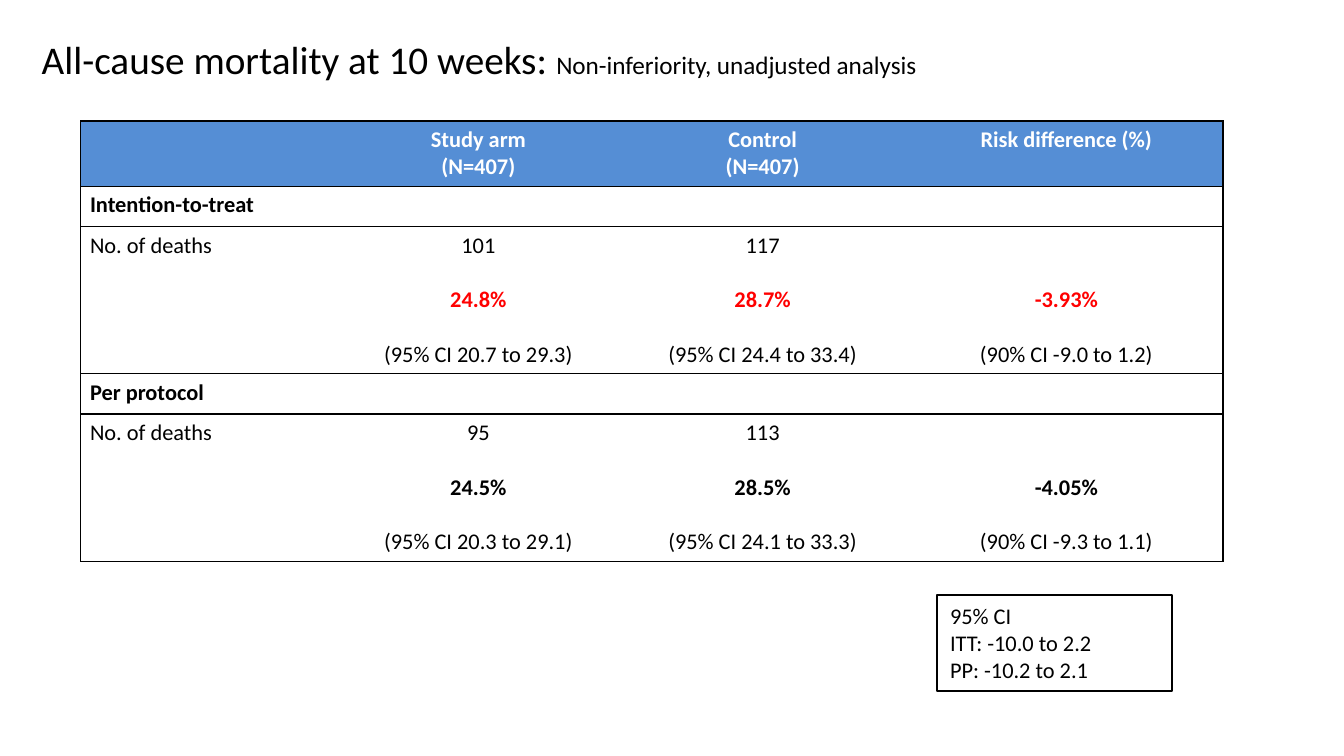
"""Build the slide on all-cause mortality at 10 weeks."""
import pptx
import pptx.dml.color
import pptx.enum.shapes
import pptx.enum.text
import pptx.oxml
import pptx.oxml.ns
import pptx.util

Inches, Pt = pptx.util.Inches, pptx.util.Pt
RGBColor = pptx.dml.color.RGBColor
ALIGN = pptx.enum.text.PP_ALIGN
ANCHOR = pptx.enum.text.MSO_ANCHOR

BLACK = RGBColor(0x00, 0x00, 0x00)
WHITE = RGBColor(0xFF, 0xFF, 0xFF)
RED = RGBColor(0xFF, 0x00, 0x00)
HEADER_BLUE = RGBColor(0x55, 0x8E, 0xD5)
FONT = "Calibri"
PLAIN_STYLE = "{2D5ABB26-0587-4C30-8999-92F81FD0307C}"

HEADLINE = [("All-cause mortality at 10 weeks: ", 21),
            ("Non-inferiority, unadjusted analysis", 13.5)]
HEADER = [[], ["Study arm", "(N=407)"], ["Control", "(N=407)"], ["Risk difference (%)"]]
ANALYSES = [
    ("Intention-to-treat", RED, [
        ["101", "24.8%", "(95% CI 20.7 to 29.3)"],
        ["117", "28.7%", "(95% CI 24.4 to 33.4)"],
        ["-3.93%", "(90% CI -9.0 to 1.2)"]]),
    ("Per protocol", BLACK, [
        ["95", "24.5%", "(95% CI 20.3 to 29.1)"],
        ["113", "28.5%", "(95% CI 24.1 to 33.3)"],
        ["-4.05%", "(90% CI -9.3 to 1.1)"]]),
]
INTERVALS = ["95% CI", "ITT: -10.0 to 2.2", "PP: -10.2 to 2.1"]

SLIDE_WIDTH = 10
SLIDE_HEIGHT = SLIDE_WIDTH * 9 / 16
COLUMN_WIDTHS = [1.94, 2.04, 2.19, 2.33]
HEADER_HEIGHT, SECTION_HEIGHT, RESULT_HEIGHT = 0.47, 0.3, 1.07
MARGIN_X, MARGIN_Y = 0.07, 0.04
RESULT_GAP = 14.6


def style(paragraph, color=BLACK, bold=False, align=ALIGN.LEFT):
    paragraph.alignment = align
    paragraph.font.name = FONT
    paragraph.font.size = Pt(12)
    paragraph.font.bold = bold
    paragraph.font.color.rgb = color


def fill_cell(cell, lines, formats, gap=0, top=MARGIN_Y, align=ALIGN.CENTER):
    cell.margin_left = cell.margin_right = Inches(MARGIN_X)
    cell.margin_top = Inches(top if lines else 0)
    cell.margin_bottom = Inches(MARGIN_Y if lines else 0)
    frame = cell.text_frame
    frame.text = "\n".join(lines)
    for index, paragraph in enumerate(frame.paragraphs):
        color, bold = formats[index] if lines else (BLACK, False)
        style(paragraph, color, bold, align)
        if index and gap:
            paragraph.space_before = Pt(gap)


def draw_borders(cell, sides):
    properties = cell._tc.get_or_add_tcPr()
    for index, side in enumerate(sides):
        properties.insert(index, pptx.oxml.parse_xml(
            f'<a:ln{side} {pptx.oxml.ns.nsdecls("a")} w="{Pt(0.75)}"><a:solidFill>'
            f'<a:srgbClr val="{BLACK}"/></a:solidFill></a:ln{side}>'))


def add_headline(slide):
    title = slide.shapes.title
    title.left, title.top = Inches(0.21), Inches(0.24)
    title.width, title.height = Inches(8.62), Inches(4.66)
    frame = title.text_frame
    frame.auto_size = pptx.enum.text.MSO_AUTO_SIZE.NONE
    frame.vertical_anchor = ANCHOR.TOP
    paragraph = frame.paragraphs[0]
    for text, size in HEADLINE:
        run = paragraph.add_run()
        run.text = text
        run.font.size = Pt(size)
    paragraph.alignment = ALIGN.LEFT
    paragraph.line_spacing = 0.94
    paragraph.font.name = FONT
    paragraph.font.color.rgb = BLACK


def add_mortality_table(slide):
    heights = [HEADER_HEIGHT] + [SECTION_HEIGHT, RESULT_HEIGHT] * len(ANALYSES)
    column_count, row_count = len(COLUMN_WIDTHS), len(heights)
    frame = slide.shapes.add_table(row_count, column_count, Inches(0.6), Inches(0.9),
                                   Inches(sum(COLUMN_WIDTHS)), Inches(sum(heights)))
    table = frame.table
    table.first_row = table.horz_banding = False
    table._tbl.tblPr.find(pptx.oxml.ns.qn("a:tableStyleId")).text = PLAIN_STYLE
    for column, width in zip(table.columns, COLUMN_WIDTHS):
        column.width = Inches(width)
    for row, height in zip(table.rows, heights):
        row.height = Inches(height)

    for column, lines in enumerate(HEADER):
        fill_cell(table.cell(0, column), lines, [(WHITE, True)] * 2)
    for index, (analysis, highlight, results) in enumerate(ANALYSES):
        section = 1 + 2 * index
        for column in range(column_count):
            fill_cell(table.cell(section, column), [] if column else [analysis],
                      [(BLACK, True)], align=ALIGN.LEFT)
        fill_cell(table.cell(section + 1, 0), ["No. of deaths"], [(BLACK, False)],
                  align=ALIGN.LEFT)
        formats = [(BLACK, False), (highlight, True), (BLACK, False)]
        for column, lines in enumerate(results, 1):
            skipped = len(formats) - len(lines)
            fill_cell(table.cell(section + 1, column), lines, formats[skipped:], RESULT_GAP,
                      MARGIN_Y + skipped * 2 * RESULT_GAP / 72)

    for row in range(row_count):
        is_section = row % 2 == 1
        for column in range(column_count):
            cell = table.cell(row, column)
            if row == 0:
                cell.fill.solid()
                cell.fill.fore_color.rgb = HEADER_BLUE
            else:
                cell.fill.background()
            edges = {"L": column == 0, "R": column == column_count - 1,
                     "T": row == 0 or is_section,
                     "B": row == row_count - 1 or is_section}
            draw_borders(cell, [side for side, drawn in edges.items() if drawn])


def add_interval_box(slide):
    box = slide.shapes.add_shape(pptx.enum.shapes.MSO_SHAPE.RECTANGLE, Inches(6.97),
                                 Inches(4.43), Inches(1.75), Inches(0.71))
    box.shadow.inherit = False
    box.fill.solid()
    box.fill.fore_color.rgb = WHITE
    box.line.color.rgb = BLACK
    box.line.width = Pt(1)
    frame = box.text_frame
    frame.word_wrap = True
    frame.auto_size = pptx.enum.text.MSO_AUTO_SIZE.SHAPE_TO_FIT_TEXT
    frame.vertical_anchor = ANCHOR.TOP
    frame.text = "\n".join(INTERVALS)
    for paragraph in frame.paragraphs:
        style(paragraph)


def main():
    presentation = pptx.Presentation()
    presentation.slide_width = Inches(SLIDE_WIDTH)
    presentation.slide_height = Inches(SLIDE_HEIGHT)
    slide = presentation.slides.add_slide(presentation.slide_layouts[5])
    add_headline(slide)
    add_mortality_table(slide)
    add_interval_box(slide)
    presentation.save("out.pptx")


if __name__ == "__main__":
    main()
